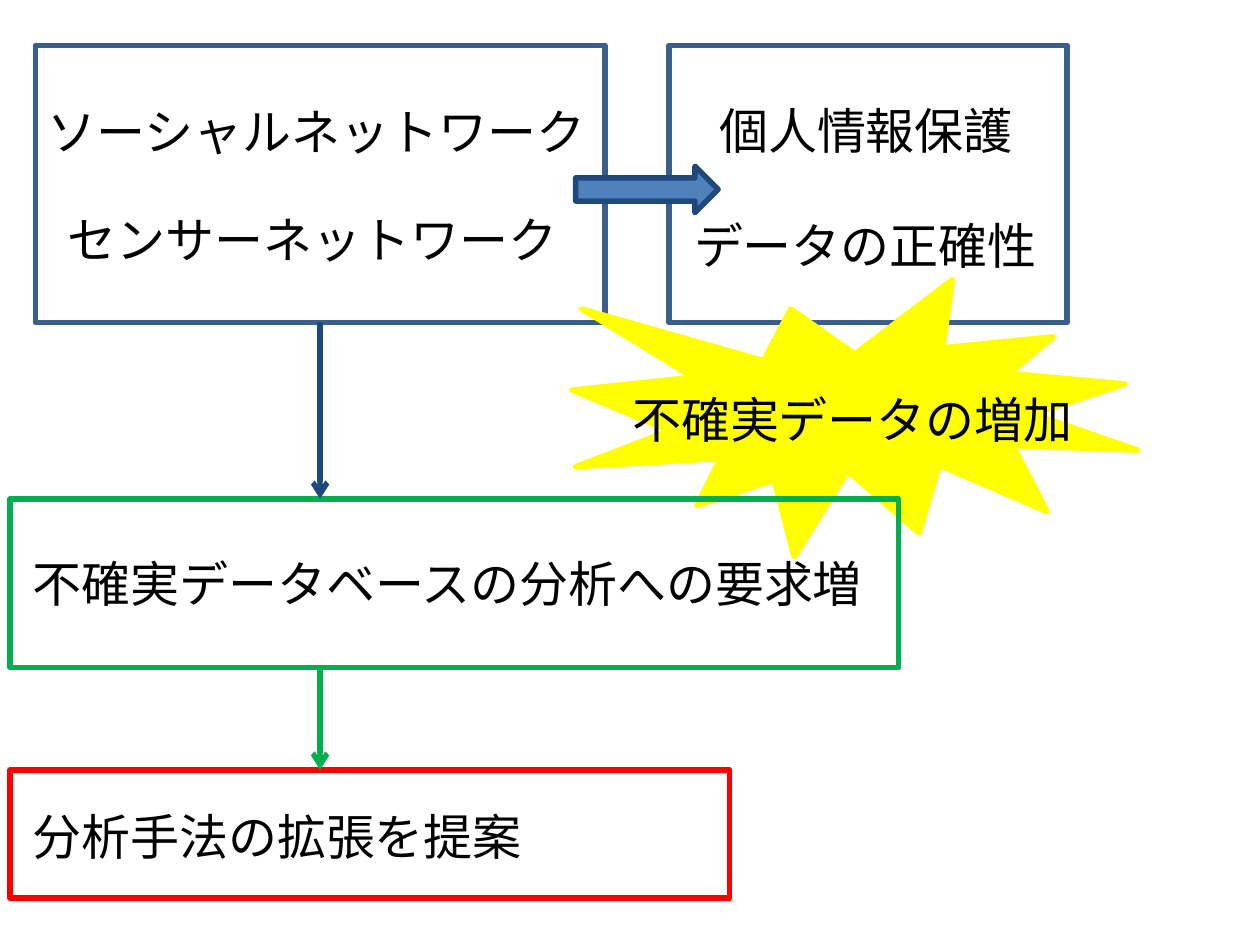
from pptx import Presentation
from pptx.dml.color import RGBColor
from pptx.enum.shapes import MSO_CONNECTOR, MSO_SHAPE
from pptx.enum.text import MSO_AUTO_SIZE
from pptx.oxml.ns import qn
from pptx.util import Pt
from lxml.etree import SubElement

BLACK = RGBColor(0x00, 0x00, 0x00)
STEEL = RGBColor(0x3A, 0x5F, 0x8C)
NAVY = RGBColor(0x1F, 0x49, 0x7D)
BLUE = RGBColor(0x4F, 0x81, 0xBD)
YELLOW = RGBColor(0xFF, 0xFF, 0x00)
GREEN = RGBColor(0x00, 0xB0, 0x50)
RED = RGBColor(0xFF, 0x00, 0x00)

FONT = {"name": "Karla", "size": Pt(28)}
FRAME = {"word_wrap": False, "auto_size": MSO_AUTO_SIZE.SHAPE_TO_FIT_TEXT}
LABEL_HEIGHT = 41.2
ARROW_X = 182.9


def apply(target, values):
    for name, value in values.items():
        setattr(target, name, value)


def add_shape(s, kind, box, line, fill=None):
    sp = s.shapes.add_shape(kind, *map(Pt, box))
    sp.shadow.inherit = False
    if fill is None:
        sp.fill.background()
    else:
        sp.fill.solid()
        sp.fill.fore_color.rgb = fill
    sp.line.color.rgb = line
    sp.line.width = Pt(3.15)
    return sp


def add_label(s, box, text, dx, dy, width):
    left, top = box[:2]
    sp = s.shapes.add_textbox(Pt(left + dx), Pt(top + dy), Pt(width), Pt(LABEL_HEIGHT))
    tf = sp.text_frame
    apply(tf, FRAME)
    r = tf.paragraphs[0].add_run()
    r.text = text
    apply(r.font, FONT)
    r.font.color.rgb = BLACK


def add_panel(s, box, color, labels):
    sp = add_shape(s, MSO_SHAPE.RECTANGLE, box, color)
    for label in labels:
        add_label(s, box, *label)
    return sp


def add_burst(s, box):
    add_shape(s, MSO_SHAPE.EXPLOSION1, box, YELLOW, YELLOW)
    add_label(s, box, "不確実データの増加", 27.3, 59.1, 269.3)


def add_down_arrow(s, top, bottom, color, source=None):
    cx = s.shapes.add_connector(
        MSO_CONNECTOR.STRAIGHT, Pt(ARROW_X), Pt(top), Pt(ARROW_X), Pt(bottom))
    if source is not None:
        cx.begin_connect(source, 2)
    cx.line.color.rgb = color
    cx.line.width = Pt(3)
    SubElement(cx.line._get_or_add_ln(), qn("a:tailEnd"), type="arrow")
    SubElement(cx._element.spPr, qn("a:effectLst"))


def main():
    prs = Presentation()
    apply(prs, {"slide_width": Pt(720), "slide_height": Pt(540)})
    s = prs.slides.add_slide(prs.slide_layouts[6])

    add_panel(s, (382.3, 25.9, 227.5, 158.4), STEEL, [
        ("個人情報保護", 21.6, 28.1, 184.3),
        ("データの正確性", 7.2, 93.6, 212.4),
    ])
    networks = add_panel(s, (20.2, 25.9, 325.4, 158.4), STEEL, [
        ("ソーシャルネットワーク", 0, 28.8, 325.4),
        ("センサーネットワーク", 11.5, 90, 297.4),
    ])
    add_burst(s, (326.9, 159.8, 323.3, 158.4))
    add_panel(s, (5.8, 285.1, 507.6, 96.5), GREEN, [
        ("不確実データベースの分析への要求増", 5.7, 27.4, 495.4),
    ])
    add_down_arrow(s, 184.3, 285.1, NAVY, networks)
    add_panel(s, (5.8, 439.9, 411.1, 73.4), RED, [
        ("分析手法の拡張を提案", 5.7, 17.3, 297.4),
    ])
    add_down_arrow(s, 381.6, 439.9, GREEN)
    add_shape(s, MSO_SHAPE.RIGHT_ARROW, (329, 95, 81.4, 26.6), NAVY, BLUE)
    prs.save("out.pptx")


if __name__ == "__main__":
    main()
